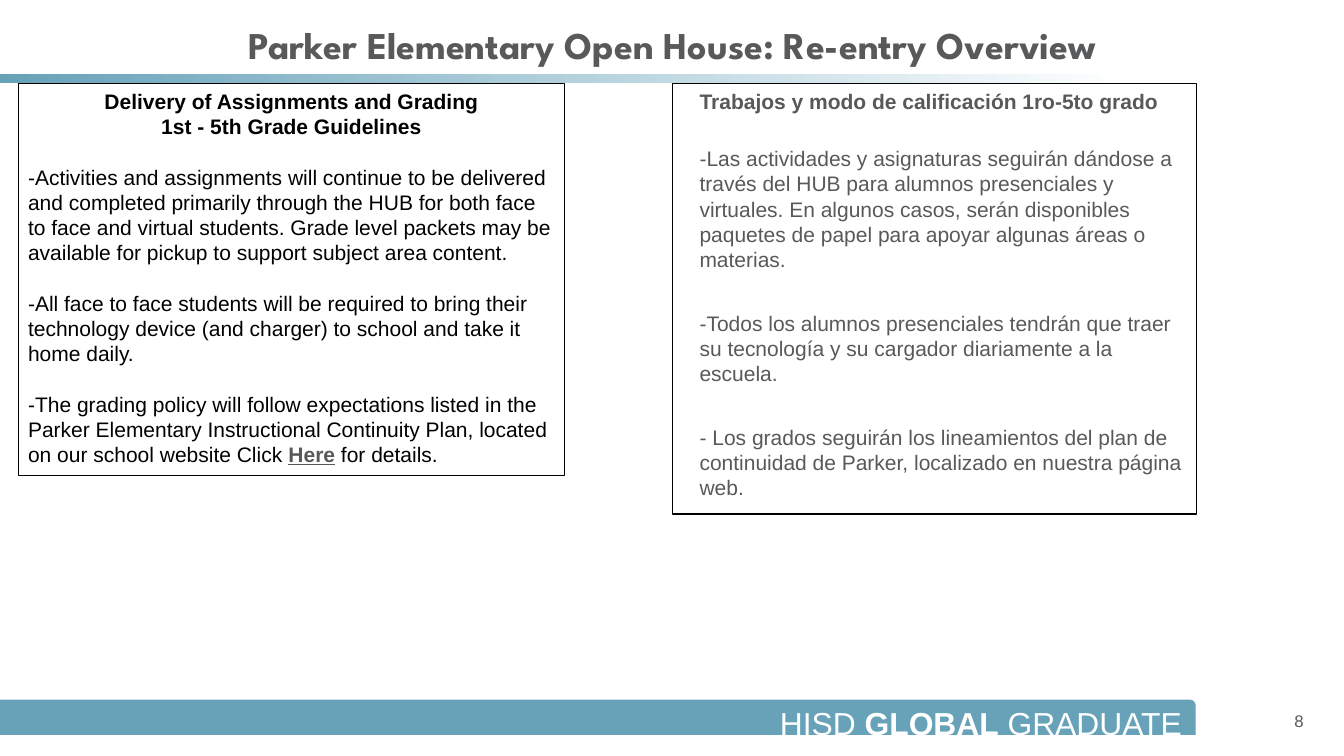
import pptx
import pptx.util
from pptx.dml.color import RGBColor
from pptx.enum.shapes import MSO_SHAPE
from pptx.enum.text import MSO_ANCHOR, PP_ALIGN

TEAL = RGBColor(0x67, 0xA2, 0xB9)
WHITE = RGBColor(0xFF, 0xFF, 0xFF)
BLACK = RGBColor(0, 0, 0)
SLATE = RGBColor(0x58, 0x59, 0x5B)
GREY = RGBColor(0x59, 0x59, 0x59)
Inches = pptx.util.Inches
Pt = pptx.util.Pt


class Deck:
    """Holds the text style and the current slide."""

    body_font = "Arial"
    title_font = "League Spartan"
    body_size = 15

    def __init__(self):
        self.prs = pptx.Presentation()
        self.prs.slide_width = Inches(13.33)
        self.prs.slide_height = Inches(7.5)
        self.s = self.prs.slides.add_slide(self.prs.slide_layouts[6])

    def bar(self, kind, left, top, width, height, color, fade_to=None):
        sp = self.s.shapes.add_shape(
            kind, Inches(left), Inches(top), Inches(width), Inches(height))
        sp.shadow.inherit = False
        sp.line.fill.background()
        if fade_to is None:
            sp.fill.solid()
            sp.fill.fore_color.rgb = color
        else:
            sp.fill.gradient()
            sp.fill.gradient_angle = 0
            for stop, position, rgb in zip(sp.fill.gradient_stops, (0, 1), (color, fade_to)):
                stop.position = position
                stop.color.rgb = rgb

    def text_box(self, left, top, width, height, anchor=MSO_ANCHOR.TOP,
                 margins=(0.1, 0.05), border=None):
        sp = self.s.shapes.add_textbox(
            Inches(left), Inches(top), Inches(width), Inches(height))
        if border is not None:
            sp.line.color.rgb = border
            sp.line.width = Pt(0.75)
        tf = sp.text_frame
        tf.word_wrap = True
        tf.vertical_anchor = anchor
        tf.margin_left = tf.margin_right = Inches(margins[0])
        tf.margin_top = tf.margin_bottom = Inches(margins[1])
        return tf

    def paragraph(self, tf, runs, color, align=PP_ALIGN.LEFT, before=0, indent=0,
                  size=body_size, font=body_font):
        p = tf.paragraphs[0]
        if p.runs:
            p = tf.add_paragraph()
        if indent:
            p._p.get_or_add_pPr().set("marL", str(Inches(indent)))
        p.alignment = align
        p.space_before = Pt(before)
        for text, bold, *link_color in runs:
            r = p.add_run()
            r.text = text
            r.font.name = font
            r.font.size = Pt(size)
            r.font.bold = bold
            r.font.color.rgb = link_color[0] if link_color else color
            r.font.underline = bool(link_color)


def main():
    deck = Deck()
    deck.bar(MSO_SHAPE.RECTANGLE, 0, 0.73, 11.23, 0.09, TEAL, fade_to=WHITE)
    deck.bar(MSO_SHAPE.ROUND_1_RECTANGLE, 0, 6.94, 11.86, 0.35, TEAL)

    tf = deck.text_box(5.01, 6.91, 6.84, 0.39, margins=(0.13, 0.07))
    deck.paragraph(tf, [("HISD ", False), ("GLOBAL", True), (" GRADUATE", False)],
                   WHITE, PP_ALIGN.RIGHT, size=22.7)

    tf = deck.text_box(0.67, 0.16, 12, 0.57, MSO_ANCHOR.MIDDLE)
    deck.paragraph(tf, [("Parker Elementary Open House: Re-entry Overview", True)],
                   SLATE, PP_ALIGN.CENTER, size=27, font=deck.title_font)

    tf = deck.text_box(12.16, 6.95, 0.87, 0.4, MSO_ANCHOR.MIDDLE)
    deck.paragraph(tf, [("8", False)], SLATE, PP_ALIGN.RIGHT, size=12)

    tf = deck.text_box(0.18, 0.83, 5.42, 3.89, border=BLACK)
    for heading in ("Delivery of Assignments and Grading", "1st - 5th Grade Guidelines"):
        deck.paragraph(tf, [(heading, True)], BLACK, PP_ALIGN.CENTER)
    guidelines = [
        [("-Activities and assignments will continue to be delivered and completed "
          "primarily through the HUB for both face to face and virtual students. "
          "Grade level packets may be available for pickup to support subject area "
          "content.", False)],
        [("-All face to face students will be required to bring their technology "
          "device (and charger) to school and take it home daily.", False)],
        [("-The grading policy will follow expectations listed in the Parker "
          "Elementary Instructional Continuity Plan, located on our school website "
          "Click ", False), ("Here", True, SLATE), (" for details.", False)],
    ]
    for runs in guidelines:
        deck.paragraph(tf, runs, BLACK, before=18)

    tf = deck.text_box(6.67, 0.83, 5.2, 4.27, border=BLACK)
    lineamientos = [
        ("Trabajos y modo de calificación 1ro-5to grado", True, 0),
        ("-Las actividades y asignaturas seguirán dándose a través del HUB para "
         "alumnos presenciales y virtuales. En algunos casos, serán disponibles "
         "paquetes de papel para apoyar algunas áreas o materias.", False, 22.8),
        ("-Todos los alumnos presenciales tendrán que traer su tecnología y su "
         "cargador diariamente a la escuela.", False, 27.6),
        ("- Los grados seguirán los lineamientos del plan de continuidad de Parker, "
         "localizado en nuestra página web.", False, 27.6),
    ]
    for text, bold, before in lineamientos:
        deck.paragraph(tf, [(text, bold)], GREY, before=before, indent=0.17)

    deck.prs.save("out.pptx")


if __name__ == "__main__":
    main()
